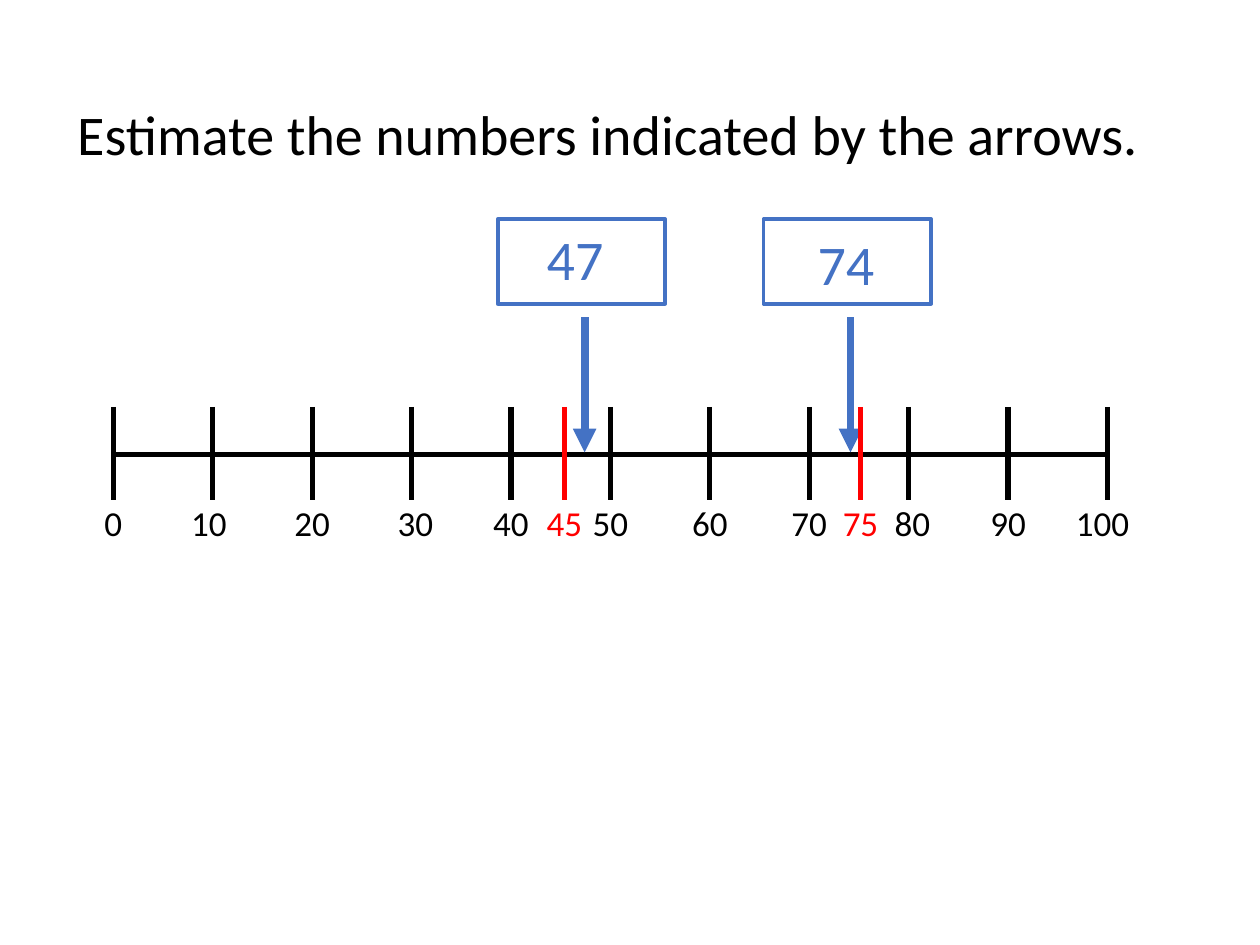
"""Build a number line slide with two estimated values marked by arrows."""
from lxml.etree import SubElement
from pptx import Presentation
from pptx.dml.color import RGBColor
from pptx.enum.shapes import MSO_CONNECTOR, MSO_SHAPE
from pptx.enum.text import MSO_ANCHOR, MSO_AUTO_SIZE, PP_ALIGN
from pptx.oxml.ns import qn
from pptx.util import Inches, Pt

TITLE = "Estimate the numbers indicated by the arrows."
SCALE = range(0, 101, 10)
LABEL_NUDGES = {10: -0.03, 30: 0.03, 80: 0.03, 100: -0.04}
GUIDES = [(45, 4.48), (75, 6.83)]
ESTIMATES = [
    {"value": 47, "center": 4.64, "text_left": 4.24, "text_top": 1.73},
    {"value": 74, "center": 6.75, "text_left": 6.39, "text_top": 1.77},
]
COLORS = {"ink": "000000", "accent": "4472C4", "guide": "FF0000", "paper": "FFFFFF"}
FONT = "Calibri"
AXIS_LEFT, AXIS_STEP, AXIS_TOP = 0.9, 0.789, 3.61
TICK_TOP, TICK_BOTTOM = 3.23, 3.97
LABEL_TOP, LABEL_WIDTH, LABEL_HEIGHT = 3.93, 0.89, 0.44
INSET, DIGIT_HALF_WIDTH = 0.1, 0.07
BOX_TOP, BOX_WIDTH, BOX_HEIGHT = 1.74, 1.33, 0.67
BOX_OFFSET = 0.69
ARROW_TOP, ARROW_BOTTOM = 2.52, 3.59


def rgb(name):
    """Return the named colour."""
    return RGBColor.from_string(COLORS[name])


def write_text(shape, text, size, color="ink", align=PP_ALIGN.LEFT):
    """Fill a shape with one formatted paragraph."""
    frame = shape.text_frame
    frame.word_wrap = True
    frame.auto_size = MSO_AUTO_SIZE.SHAPE_TO_FIT_TEXT
    frame.vertical_anchor = MSO_ANCHOR.TOP
    paragraph = frame.paragraphs[0]
    paragraph.alignment = align
    run = paragraph.add_run()
    run.text = text
    run.font.name = FONT
    run.font.size = Pt(size)
    run.font.color.rgb = rgb(color)


def add_label(slide, text, left, top, width, height, **text_format):
    """Add a text box holding a number."""
    shape = slide.shapes.add_textbox(*map(Inches, (left, top, width, height)))
    write_text(shape, text, **text_format)


def add_line(slide, start, end, color="ink", weight=3, arrow=False):
    """Add a straight line, with an arrowhead at its end if asked."""
    line = slide.shapes.add_connector(
        MSO_CONNECTOR.STRAIGHT, *map(Inches, (*start, *end))
    )
    line.line.color.rgb = rgb(color)
    line.line.width = Pt(weight)
    if arrow:
        SubElement(line.line._get_or_add_ln(), qn("a:tailEnd"), type="triangle")
    SubElement(line._element.spPr, qn("a:effectLst"))


def add_tick(slide, value, position, color="ink", nudge=0):
    """Add a tick with its number below."""
    text = str(value)
    left = position - INSET - DIGIT_HALF_WIDTH * len(text) + nudge
    add_line(slide, (position, TICK_TOP), (position, TICK_BOTTOM), color)
    add_label(
        slide, text, left, LABEL_TOP, LABEL_WIDTH, LABEL_HEIGHT, size=20, color=color
    )


def add_estimate(slide, value, center, text_left, text_top):
    """Add a boxed number with an arrow down to the number line."""
    add_line(
        slide, (center, ARROW_TOP), (center, ARROW_BOTTOM), "accent", 4.5, arrow=True
    )
    bounds = (center - BOX_OFFSET, BOX_TOP, BOX_WIDTH, BOX_HEIGHT)
    box = slide.shapes.add_shape(MSO_SHAPE.RECTANGLE, *map(Inches, bounds))
    box.shadow.inherit = False
    box.fill.solid()
    box.fill.fore_color.rgb = rgb("paper")
    box.line.color.rgb = rgb("accent")
    box.line.width = Pt(2.25)
    add_label(
        slide, str(value), text_left, text_top, 0.91, 0.64, size=32, color="accent"
    )


def main():
    """Build and save the slide."""
    presentation = Presentation()
    presentation.slide_width, presentation.slide_height = Inches(10), Inches(7.5)
    slide = presentation.slides.add_slide(presentation.slide_layouts[5])
    title = slide.shapes.title
    title.left, title.top = Inches(0.45), Inches(0.74)
    title.width, title.height = Inches(8.75), Inches(0.64)
    write_text(title, TITLE, size=32, align=PP_ALIGN.CENTER)

    axis_right = AXIS_LEFT + AXIS_STEP * (len(SCALE) - 1)
    add_line(slide, (AXIS_LEFT, AXIS_TOP), (axis_right, AXIS_TOP))
    for index, value in enumerate(SCALE):
        position = AXIS_LEFT + index * AXIS_STEP
        add_tick(slide, value, position, nudge=LABEL_NUDGES.get(value, 0))
    for estimate in ESTIMATES:
        add_estimate(slide, **estimate)
    for value, position in GUIDES:
        add_tick(slide, value, position, color="guide")
    presentation.save("out.pptx")


if __name__ == "__main__":
    main()
